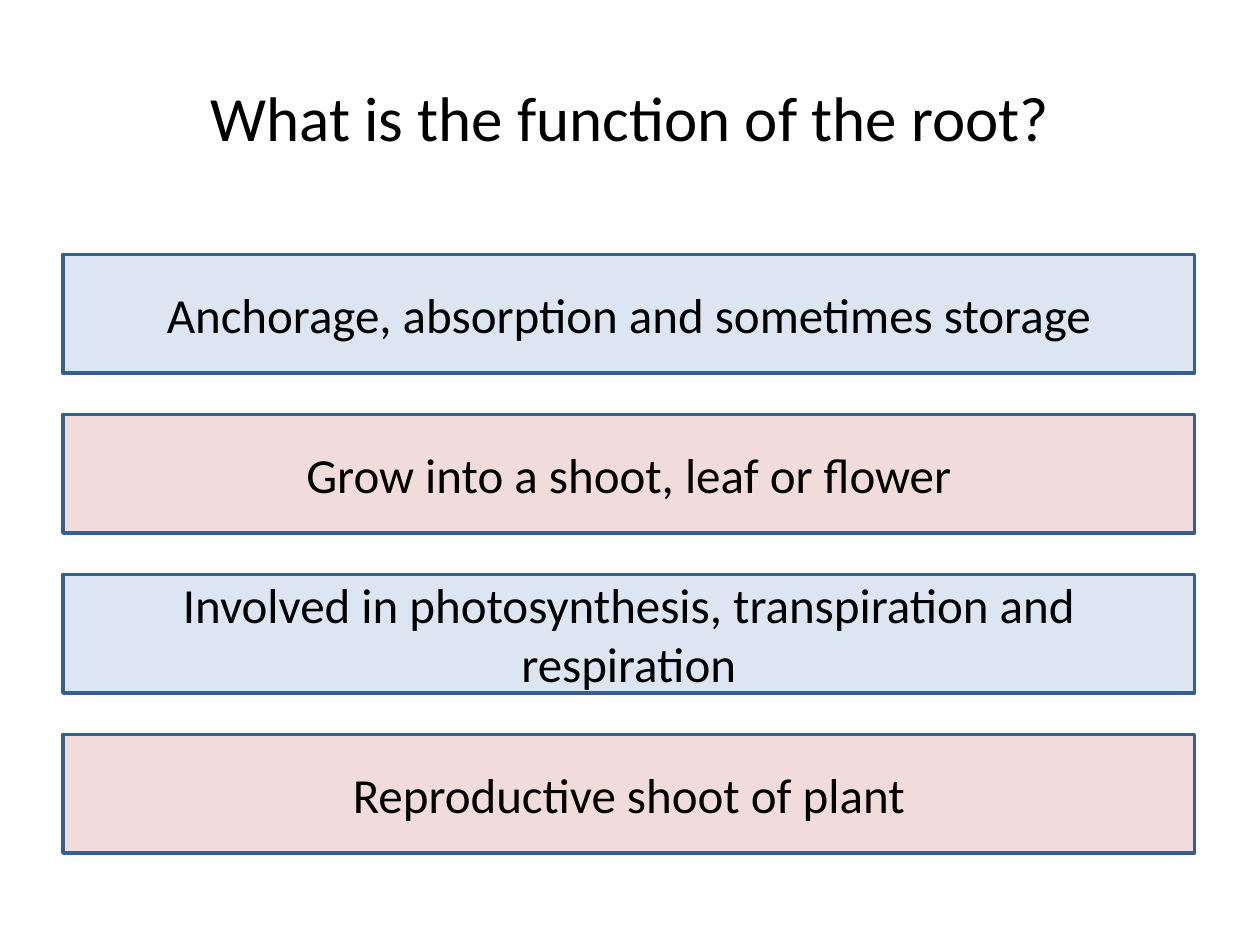
import pptx
import pptx.dml.color
import pptx.enum.shapes
import pptx.enum.text
import pptx.util

COLORS = {"text": "000000", "blue": "DCE6F2", "pink": "F2DCDB", "border": "3A5F8C"}
FONT = "Calibri"
PAGE_WIDTH, PAGE_HEIGHT = 10, 7.5
TITLE_BOX = (0.5, 0.3, 9, 1.25)
ANSWERS_BOX = (0.5, 2.02, 8.98, 4.75)
BUTTON_HEIGHT = 0.94
QUESTION = "What is the function of the root?"
ANSWERS = [
    "Anchorage, absorption and sometimes storage",
    "Grow into a shoot, leaf or flower",
    "Involved in photosynthesis, transpiration and respiration",
    "Reproductive shoot of plant",
]


def rgb(name):
    return pptx.dml.color.RGBColor.from_string(COLORS[name])


def inches(box):
    return [pptx.util.Inches(length) for length in box]


def write_centred(shape, text, size):
    frame = shape.text_frame
    frame.word_wrap = True
    frame.vertical_anchor = pptx.enum.text.MSO_ANCHOR.MIDDLE
    para = frame.paragraphs[0]
    para.text = text
    para.alignment = pptx.enum.text.PP_ALIGN.CENTER
    para.font.name = FONT
    para.font.size = pptx.util.Pt(size)
    para.font.color.rgb = rgb("text")


def add_title(page, box, text):
    write_centred(page.shapes.add_textbox(*inches(box)), text, 36)


def add_button(page, box, text, fill):
    button = page.shapes.add_shape(
        pptx.enum.shapes.MSO_SHAPE.ACTION_BUTTON_CUSTOM, *inches(box)
    )
    button.shadow.inherit = False
    button.fill.solid()
    button.fill.fore_color.rgb = rgb(fill)
    button.line.color.rgb = rgb("border")
    button.line.width = pptx.util.Pt(2)
    write_centred(button, text, 28)


def add_answers(page, box, answers):
    """Spread the answer buttons evenly down the box, in alternating colours."""
    left, top, width, height = box
    pitch = (height - BUTTON_HEIGHT) / (len(answers) - 1)
    for row, answer in enumerate(answers):
        fill = ("blue", "pink")[row % 2]
        add_button(page, (left, top + row * pitch, width, BUTTON_HEIGHT), answer, fill)


def main():
    deck = pptx.Presentation()
    deck.slide_width, deck.slide_height = inches((PAGE_WIDTH, PAGE_HEIGHT))
    page = deck.slides.add_slide(deck.slide_layouts[6])
    add_title(page, TITLE_BOX, QUESTION)
    add_answers(page, ANSWERS_BOX, ANSWERS)
    deck.save("out.pptx")


if __name__ == "__main__":
    main()
